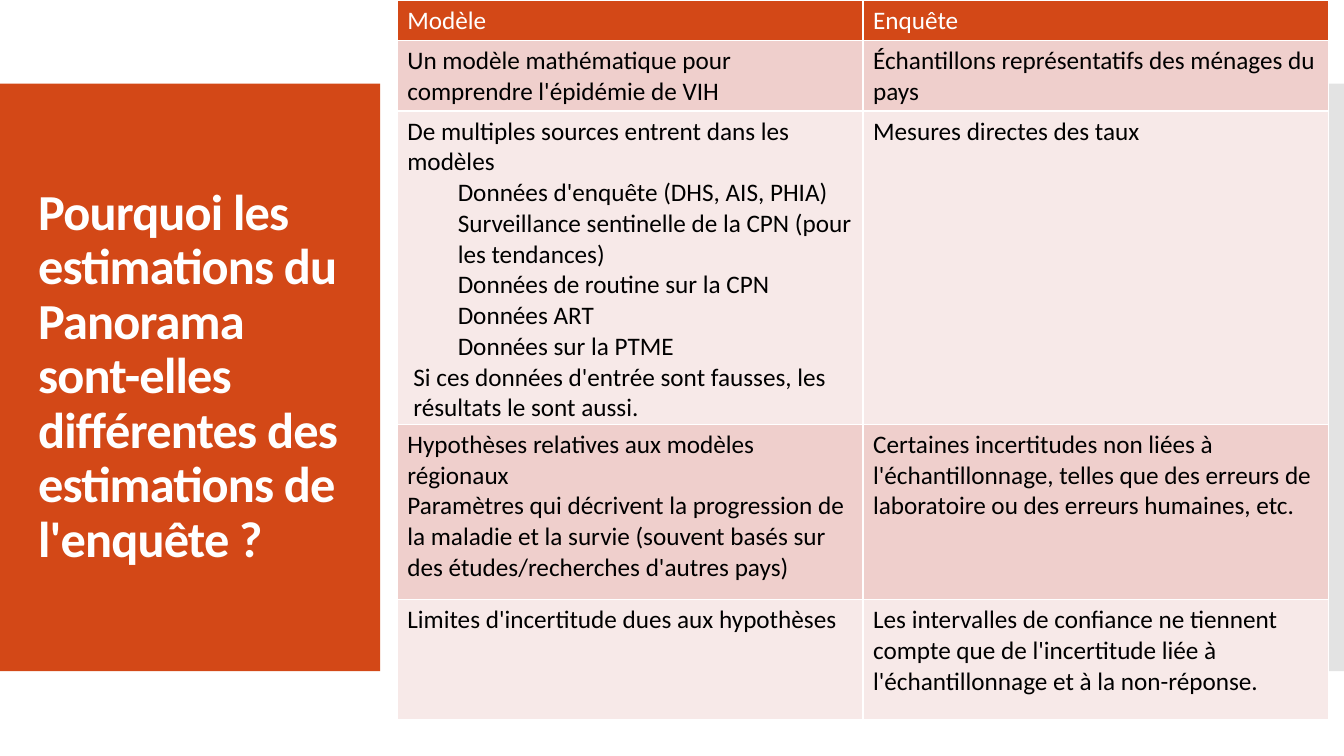
from lxml import etree
from pptx import Presentation
from pptx.dml.color import RGBColor
from pptx.enum import shapes, text
from pptx.oxml import ns
from pptx.util import Inches, Pt

ORANGE = RGBColor(0xD3, 0x48, 0x17)
GREY = RGBColor(0xC8, 0xC8, 0xC8)
ROSE = RGBColor(0xEF, 0xCF, 0xCC)
PALE_ROSE = RGBColor(0xF7, 0xE9, 0xE8)
WHITE = RGBColor(0xFF, 0xFF, 0xFF)
BLACK = RGBColor(0, 0, 0)
FONT = "Calibri"


def add_band(left, width, color):
    band = page.shapes.add_shape(
        shapes.MSO_SHAPE.RECTANGLE, Inches(left), Inches(0.83), Inches(width), Inches(5.83))
    band.shadow.inherit = False
    band.fill.solid()
    band.fill.fore_color.rgb = color
    band.line.fill.background()
    return band


def add_borders(cell):
    properties = cell._tc.get_or_add_tcPr()
    for side in ("lnL", "lnR", "lnT", "lnB"):
        line = etree.SubElement(properties, ns.qn(f"a:{side}"), w=str(Pt(1)))
        fill = etree.SubElement(line, ns.qn("a:solidFill"))
        etree.SubElement(fill, ns.qn("a:srgbClr"), val=str(WHITE))


deck = Presentation()
deck.slide_width = Inches(13.33)
deck.slide_height = Inches(7.5)
page = deck.slides.add_slide(deck.slide_layouts[6])

# Side bands, the right one half transparent
add_band(0, 3.77, ORANGE)
right_band = add_band(12.92, 0.42, GREY)
grey = right_band._element.spPr.find(".//" + ns.qn("a:srgbClr"))
etree.SubElement(grey, ns.qn("a:alpha"), val="50000")

# Title
box = page.shapes.add_textbox(Inches(0.28), Inches(1.23), Inches(3.22), Inches(5.03))
frame = box.text_frame
frame.word_wrap = True
frame.vertical_anchor = text.MSO_ANCHOR.MIDDLE
title = frame.paragraphs[0]
title.text = ("Pourquoi les estimations du Panorama \v"
              "sont-elles différentes des estimations de l'enquête ?")
title.line_spacing = 0.9
title.font.name = FONT
title.font.size = Pt(36)
title.font.bold = True
title.font.color.rgb = WHITE
for span in title.runs:
    span._r.get_or_add_rPr().set("spc", "-60")

# Comparison table: each cell lists its paragraphs, a pair adds a left indent
ROWS = [
    (0.37, ["Modèle"], ["Enquête"]),
    (0.64, ["Un modèle mathématique pour comprendre l'épidémie de VIH"],
     ["Échantillons représentatifs des ménages du pays"]),
    (3.11, ["De multiples sources entrent dans les modèles",
            ("Données d'enquête (DHS, AIS, PHIA)", 0.5),
            ("Surveillance sentinelle de la CPN (pour les tendances)", 0.5),
            ("Données de routine sur la CPN", 0.5),
            ("Données ART", 0.5),
            ("Données sur la PTME", 0.5),
            ("Si ces données d'entrée sont fausses, les résultats le sont aussi.", 0.06)],
     ["Mesures directes des taux"]),
    (1.74, ["Hypothèses relatives aux modèles régionaux",
            "Paramètres qui décrivent la progression de la maladie et la survie "
            "(souvent basés sur des études/recherches d'autres pays)"],
     ["Certaines incertitudes non liées à l'échantillonnage, telles que des erreurs "
      "de laboratoire ou des erreurs humaines, etc."]),
    (1.19, ["Limites d'incertitude dues aux hypothèses"],
     ["Les intervalles de confiance ne tiennent compte que de l'incertitude liée à "
      "l'échantillonnage et à la non-réponse."]),
]
table = page.shapes.add_table(
    len(ROWS), 2, Inches(3.94), Inches(0), Inches(9.24), Inches(7.05)).table

for row, (height, *cells) in enumerate(ROWS):
    table.rows[row].height = Inches(height)
    for column, entries in enumerate(cells):
        cell = table.cell(row, column)
        add_borders(cell)
        cell.fill.solid()
        cell.fill.fore_color.rgb = ORANGE if row == 0 else (PALE_ROSE, ROSE)[row % 2]
        for index, entry in enumerate(entries):
            wording, indent = entry if isinstance(entry, tuple) else (entry, 0)
            frame = cell.text_frame
            para = frame.add_paragraph() if index else frame.paragraphs[0]
            para.text = wording
            para.font.name = FONT
            para.font.size = Pt(18)
            para.font.bold = False
            para.font.color.rgb = BLACK if row else WHITE
            if indent:
                para.level = 1
                para._p.get_or_add_pPr().set("marL", str(Inches(indent)))
                para._p.get_or_add_pPr().set("indent", "0")

deck.save("out.pptx")
